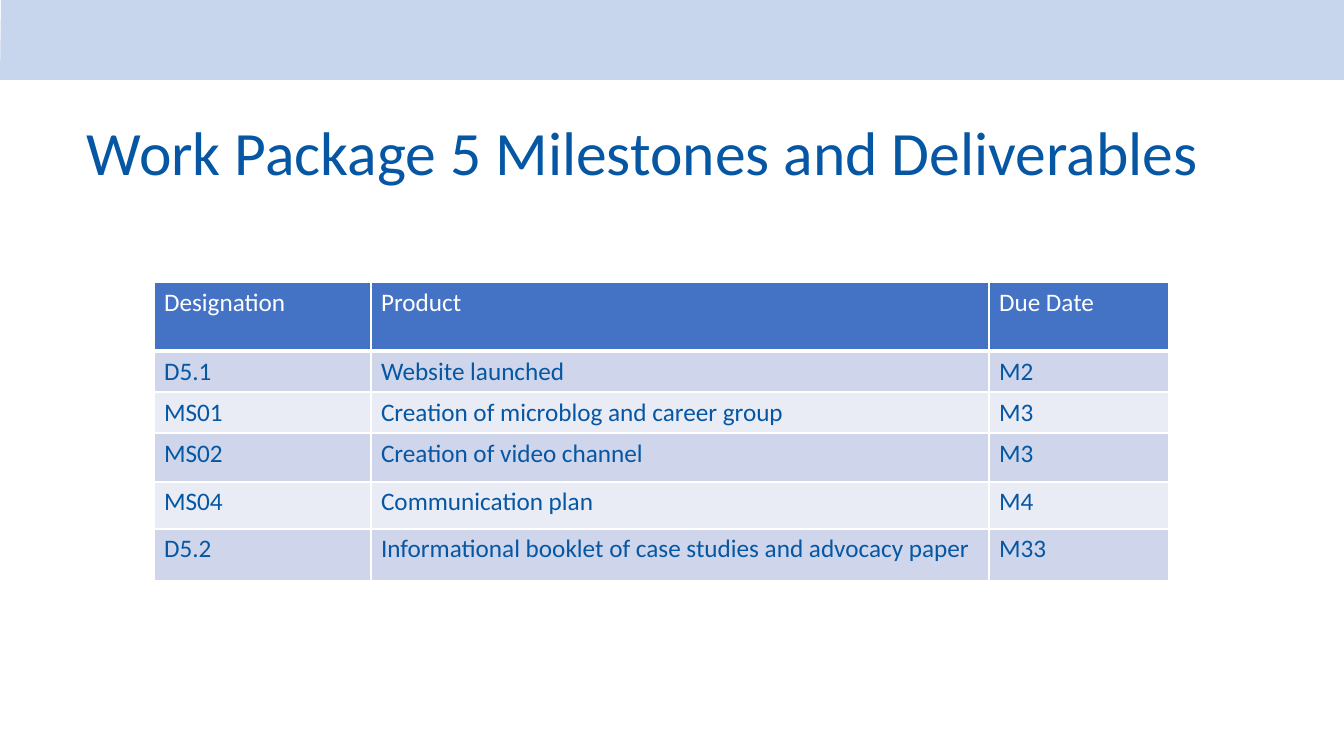
from lxml.etree import SubElement
from pptx import Presentation
from pptx.dml.color import RGBColor as RGB
from pptx.enum.text import MSO_ANCHOR as Anchor
from pptx.oxml.ns import qn
from pptx.util import Emu, Pt

TITLE = "Work Package 5 Milestones and Deliverables"
ROWS = [
    ("Designation", "Product", "Due Date"),
    ("D5.1", "Website launched", "M2"),
    ("MS01", "Creation of microblog and career group", "M3"),
    ("MS02", "Creation of video channel", "M3"),
    ("MS04", "Communication plan", "M4"),
    ("D5.2", "Informational booklet of case studies and advocacy paper", "M33"),
]
WIDTHS = (217, 618, 180)
HEIGHTS = (69, 41, 41, 49, 47, 52)
BAND = [(0, 80), (1, 0), (1344, 0), (1344, 80)]

FONT = "Calibri"
BLUE = RGB(0x06, 0x57, 0xA3)
WHITE = RGB(0xFF, 0xFF, 0xFF)
SKY = RGB(0xC7, 0xD5, 0xED)
HEAD = RGB(0x44, 0x72, 0xC4)
STRIPES = (RGB(0xE9, 0xEB, 0xF5), RGB(0xCF, 0xD5, 0xEA))
SCALE = 12192000 / 1344


def px(n):
    return Emu(round(n * SCALE))


def style(par, size, color):
    for run in par.runs:
        font = run.font
        font.name, font.size, font.bold = FONT, Pt(size), False
        font.color.rgb = color


def border(cell, side, width):
    line = SubElement(cell._tc.get_or_add_tcPr(), qn(f"a:ln{side}"), w=str(Pt(width)))
    fill = SubElement(line, qn("a:solidFill"))
    SubElement(fill, qn("a:srgbClr"), val=str(WHITE))


def add_band(slide):
    outline = slide.shapes.build_freeform(*BAND[0], scale=SCALE)
    outline.add_line_segments(BAND[1:], close=True)
    band = outline.convert_to_shape()
    band.shadow.inherit = False
    band.fill.solid()
    band.fill.fore_color.rgb = SKY
    band.line.fill.background()


def add_title(slide):
    box = slide.shapes.add_textbox(px(77), px(120), px(1175), px(72))
    frame = box.text_frame
    frame.word_wrap = True
    frame.vertical_anchor = Anchor.MIDDLE
    frame.text = TITLE
    par = frame.paragraphs[0]
    par.line_spacing = 0.9
    style(par, 44, BLUE)


def add_grid(slide):
    frame = slide.shapes.add_table(
        len(ROWS), len(WIDTHS), px(154), px(282), px(sum(WIDTHS)), px(sum(HEIGHTS)))
    table = frame.table
    for col, width in zip(table.columns, WIDTHS):
        col.width = px(width)
    for i, (row, height, texts) in enumerate(zip(table.rows, HEIGHTS, ROWS)):
        row.height = px(height)
        for cell, text in zip(row.cells, texts):
            cell.text = text
            style(cell.text_frame.paragraphs[0], 18, BLUE if i else WHITE)
            for side in "LRTB":
                thick = (i, side) in ((0, "B"), (1, "T"))
                border(cell, side, 3 if thick else 1)
            cell.fill.solid()
            cell.fill.fore_color.rgb = STRIPES[i % 2] if i else HEAD


def main():
    deck = Presentation()
    deck.slide_width, deck.slide_height = px(1344), px(756)
    slide = deck.slides.add_slide(deck.slide_layouts[6])
    add_band(slide)
    add_title(slide)
    add_grid(slide)
    deck.save("out.pptx")


if __name__ == "__main__":
    main()
